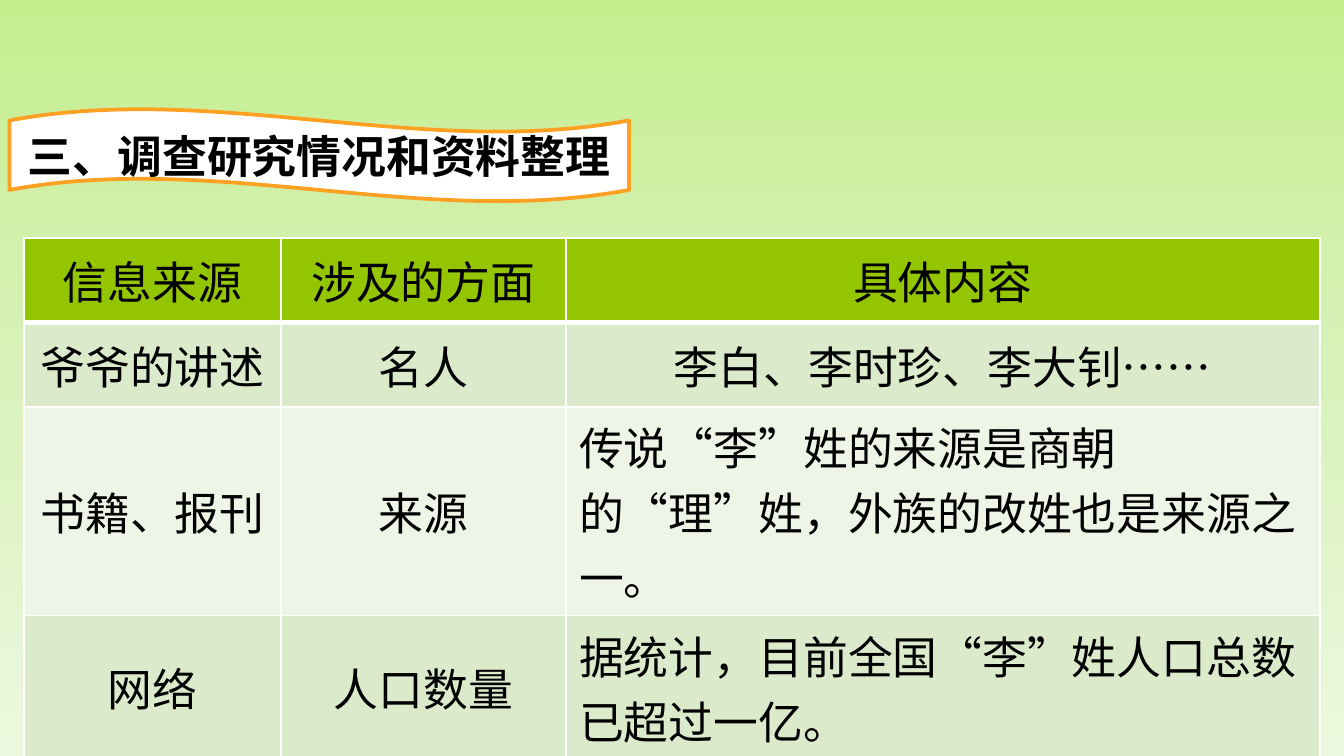
from copy import deepcopy

from lxml.etree import SubElement
from pptx import Presentation
from pptx.dml.color import RGBColor
from pptx.enum.lang import MSO_LANGUAGE_ID
from pptx.enum.shapes import MSO_SHAPE
from pptx.enum.text import MSO_ANCHOR, PP_ALIGN
from pptx.oxml.ns import qn
from pptx.util import Inches, Pt

FONT = "Noto Sans CJK SC"
COL_WIDTHS = [1.91, 2.12, 5.61]
ROW_HEIGHTS = [0.63, 0.63, 1.01, 0.71]
ROW_FILLS = ["94C600", "DCEACC", "EEF5E7", "DCEACC"]
ROWS = [
    ["信息来源", "涉及的方面", "具体内容"],
    ["爷爷的讲述", "名人", "李白、李时珍、李大钊……"],
    ["书籍、报刊", "来源", "传说“李”姓的来源是商朝的“理”姓，外族的改姓也是来源之一。"],
    ["网络", "人口数量", "据统计，目前全国“李”姓人口总数已超过一亿。"],
]


def color(hex_code):
    return RGBColor.from_string(hex_code)


def set_background(s, hex_codes):
    fill = s.background.fill
    fill.gradient()
    fill.gradient_angle = 270
    # Middle stop
    first = fill.gradient_stops[0]._gs
    first.addnext(deepcopy(first))
    last = len(hex_codes) - 1
    for i, (stop, code) in enumerate(zip(fill.gradient_stops, hex_codes)):
        stop.position = i / last
        stop.color.rgb = color(code)


def add_text(tf, text, align, bold=False):
    p = tf.paragraphs[0]
    p.alignment = align
    r = p.add_run()
    r.text = text
    r.font.size = Pt(24)
    r.font.bold = bold
    r.font.name = FONT
    r.font.language_id = MSO_LANGUAGE_ID.SIMPLIFIED_CHINESE
    r.font.color.rgb = color("000000")
    # East Asian typeface
    SubElement(r.font._element, qn("a:ea"), typeface=FONT)


def add_banner(s, text, left, top, width, height):
    sp = s.shapes.add_shape(MSO_SHAPE.WAVE, Inches(left), Inches(top),
                            Inches(width), Inches(height))
    sp.shadow.inherit = False
    sp.fill.solid()
    sp.fill.fore_color.rgb = color("FFFFFF")
    sp.line.color.rgb = color("FEA022")
    sp.line.width = Pt(2)
    tf = sp.text_frame
    tf.word_wrap = True
    tf.vertical_anchor = MSO_ANCHOR.MIDDLE
    add_text(tf, text, PP_ALIGN.CENTER, bold=True)


def set_borders(cell, top, bottom):
    tc_pr = cell._tc.get_or_add_tcPr()
    for side, width in (("L", 1), ("R", 1), ("T", top), ("B", bottom)):
        ln = SubElement(tc_pr, qn(f"a:ln{side}"), w=str(Pt(width)))
        fill = SubElement(ln, qn("a:solidFill"))
        SubElement(fill, qn("a:srgbClr"), val="FFFFFF")


def add_source_table(s, left, top):
    table = s.shapes.add_table(
        len(ROWS), len(COL_WIDTHS), Inches(left), Inches(top),
        Inches(sum(COL_WIDTHS)), Inches(sum(ROW_HEIGHTS))).table
    for column, width in zip(table.columns, COL_WIDTHS):
        column.width = Inches(width)
    for i, texts in enumerate(ROWS):
        table.rows[i].height = Inches(ROW_HEIGHTS[i])
        for j, text in enumerate(texts):
            cell = table.cell(i, j)
            # Thick rule under the header row
            set_borders(cell, 3 if i == 1 else 1, 3 if i == 0 else 1)
            cell.fill.solid()
            cell.fill.fore_color.rgb = color(ROW_FILLS[i])
            cell.vertical_anchor = MSO_ANCHOR.MIDDLE
            # Long descriptions read from the left
            align = PP_ALIGN.LEFT if len(text) > 15 else PP_ALIGN.CENTER
            add_text(cell.text_frame, text, align)


def main():
    prs = Presentation()
    # Widescreen, 16:9
    prs.slide_width, prs.slide_height = Inches(10), Inches(10 * 9 / 16)
    s = prs.slides.add_slide(prs.slide_layouts[6])
    set_background(s, ["C4EE8E", "D9F2BB", "ECF8DE"])
    add_banner(s, "三、调查研究情况和资料整理", 0.07, 0.81, 4.61, 0.69)
    add_source_table(s, 0.18, 1.77)
    prs.save("out.pptx")


if __name__ == "__main__":
    main()
